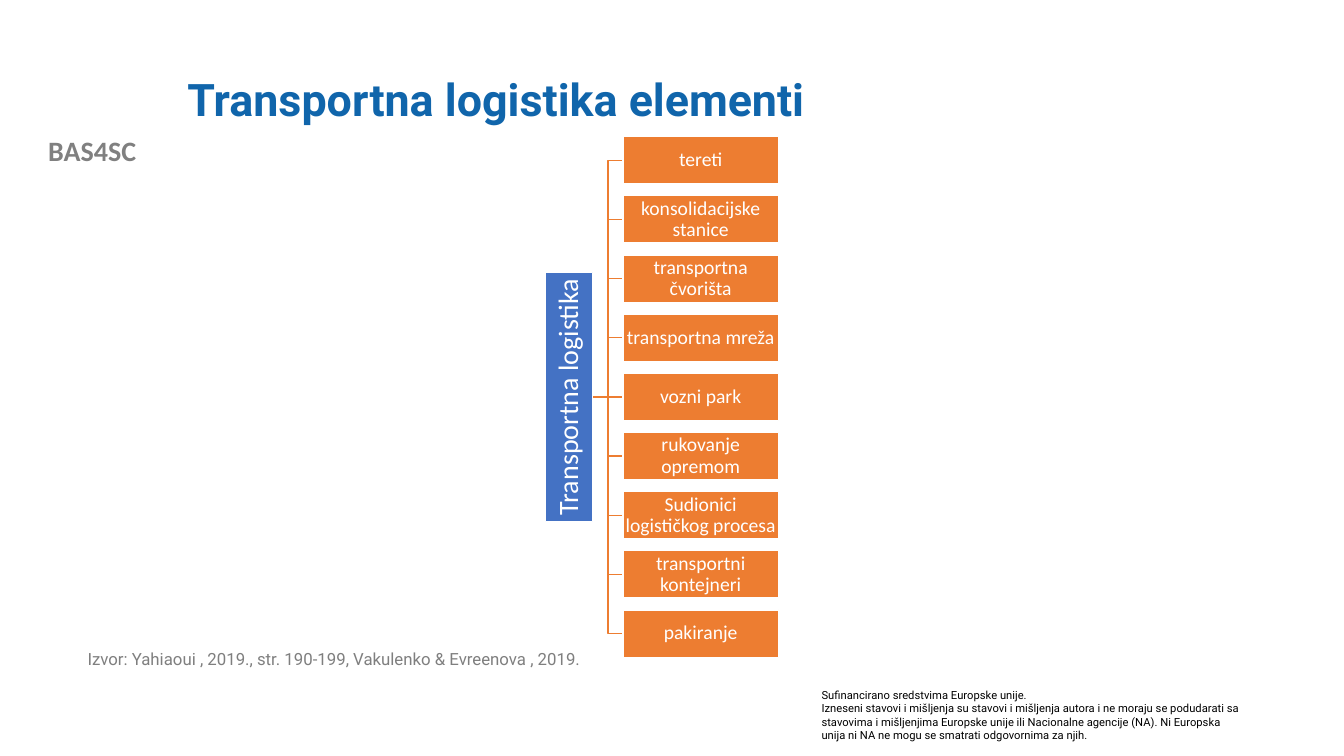
from lxml import etree
from pptx import Presentation
from pptx import util as u
from pptx.dml.color import RGBColor
from pptx.enum import shapes, text
from pptx.oxml.ns import qn

WIDTH, HEIGHT = 13.33, 7.5
ORANGE, BLUE, WHITE = "ED7D31", "4472C4", "FFFFFF"

ROOT = "Transportna logistika"
ELEMENTS = [
    "tereti",
    "konsolidacijske stanice",
    "transportna čvorišta",
    "transportna mreža",
    "vozni park",
    "rukovanje opremom",
    "Sudionici logističkog procesa",
    "transportni kontejneri",
    "pakiranje",
]
LEFT, MIDDLE = text.PP_ALIGN.LEFT, text.MSO_ANCHOR.MIDDLE
CENTER, TOP = text.PP_ALIGN.CENTER, text.MSO_ANCHOR.TOP

# box (left, top, width, height), lines, style
TEXTS = [
    ((0, 1.28, 1.83, 0.44), ["BAS4SC"],
     dict(size=20, font="Calibri", color="808080", bold=True, align=CENTER)),
    ((8.05, 6.78, 4.37, 0.64),
     ["Sufinancirano sredstvima Europske unije.",
      "Izneseni stavovi i mišljenja su stavovi i mišljenja autora i ne moraju se "
      "podudarati sa stavovima i mišljenjima Europske unije ili Nacionalne agencije "
      "(NA). Ni Europska unija ni NA ne mogu se smatrati odgovornima za njih."],
     dict(size=8, font="Roboto", color="000000")),
    ((1.76, 0.4, 10.66, 1.22), ["Transportna logistika elementi"],
     dict(size=32, font="Roboto", color="1065AB", bold=True, anchor=MIDDLE, spacing=0.9)),
    ((0.77, 6.41, 5.6, 0.52),
     ["Izvor: Yahiaoui , 2019., str. 190-199, Vakulenko & Evreenova , 2019."],
     dict(size=12, font="Roboto", color="7F7F7F", spacing=0.9)),
]

# Tree geometry: equal rows to the right of an upright root box
BOX_LEFT, BOX_WIDTH, BOX_HEIGHT = 6.18, 1.54, 0.47
FIRST_CENTER, ROW_PITCH = 1.59, 0.587
ROOT_LENGTH, ROOT_RIGHT = 2.47, 5.88


def rgb(color):
    return RGBColor.from_string(color)


def write(shape, lines, size, font, color, bold=False, align=LEFT, anchor=TOP,
          spacing=None, inset=None):
    frame = shape.text_frame
    frame.word_wrap = True
    frame.vertical_anchor = anchor
    if inset is not None:
        frame.margin_left = frame.margin_right = u.Inches(inset)
        frame.margin_top = frame.margin_bottom = u.Inches(inset)
    frame.text = "\n".join(lines)
    for paragraph in frame.paragraphs:
        paragraph.alignment = align
        paragraph.line_spacing = spacing
        paragraph.font.size = u.Pt(size)
        paragraph.font.name = font
        paragraph.font.bold = bold
        paragraph.font.color.rgb = rgb(color)


def add_box(slide, label, center_x, center_y, width, fill, size):
    box = slide.shapes.add_shape(
        shapes.MSO_SHAPE.RECTANGLE,
        u.Inches(center_x - width / 2), u.Inches(center_y - BOX_HEIGHT / 2),
        u.Inches(width), u.Inches(BOX_HEIGHT))
    box.shadow.inherit = False
    box.fill.solid()
    box.fill.fore_color.rgb = rgb(fill)
    box.line.color.rgb = rgb(WHITE)
    box.line.width = u.Pt(1)
    write(box, [label], size, "Calibri", WHITE, align=CENTER, anchor=MIDDLE,
          spacing=0.9, inset=0.01)
    return box


def add_branch(slide, start_y, end_y):
    kind = shapes.MSO_CONNECTOR.STRAIGHT if start_y == end_y else shapes.MSO_CONNECTOR.ELBOW
    branch = slide.shapes.add_connector(
        kind, u.Inches(ROOT_RIGHT), u.Inches(start_y), u.Inches(BOX_LEFT), u.Inches(end_y))
    branch.line.color.rgb = rgb(ORANGE)
    branch.line.width = u.Pt(1)
    etree.SubElement(branch._element.spPr, qn("a:effectLst"))
    return branch


def add_tree(slide):
    centers = [FIRST_CENTER + row * ROW_PITCH for row in range(len(ELEMENTS))]
    root_y = centers[len(centers) // 2]
    branches = [add_branch(slide, root_y, center) for center in centers]
    root = add_box(slide, ROOT, ROOT_RIGHT - BOX_HEIGHT / 2, root_y, ROOT_LENGTH, BLUE, 20)
    root.rotation = 270
    for label, center, branch in zip(ELEMENTS, centers, branches):
        box = add_box(slide, label, BOX_LEFT + BOX_WIDTH / 2, center, BOX_WIDTH, ORANGE, 14)
        if center == root_y:
            branch.end_connect(box, 1)


def main():
    presentation = Presentation()
    presentation.slide_width = u.Inches(WIDTH)
    presentation.slide_height = u.Inches(HEIGHT)
    slide = presentation.slides.add_slide(presentation.slide_layouts[6])
    for box, lines, style in TEXTS:
        write(slide.shapes.add_textbox(*map(u.Inches, box)), lines, **style)
    add_tree(slide)
    presentation.save("out.pptx")


if __name__ == "__main__":
    main()
